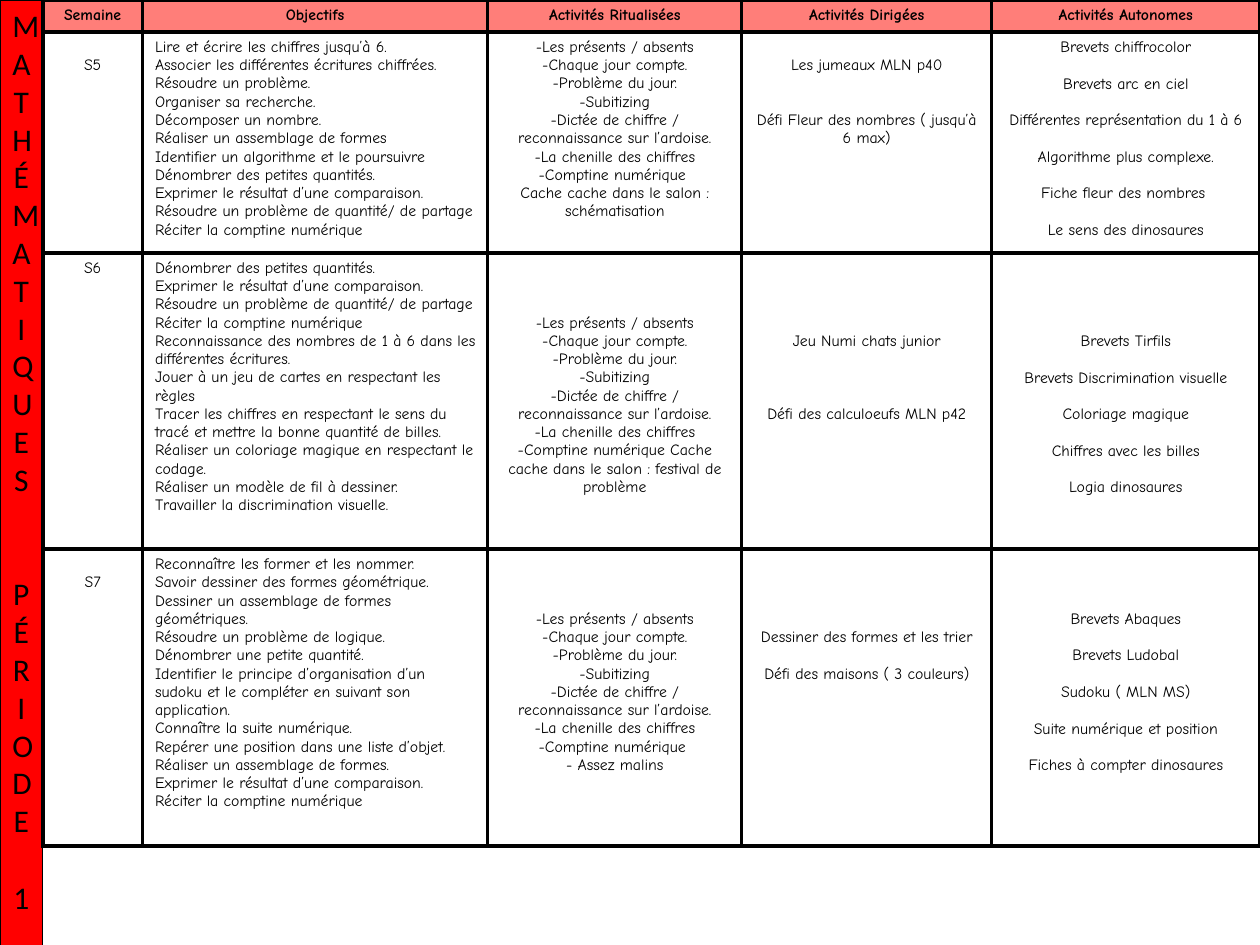
from lxml import etree
from pptx import Presentation
from pptx.dml.color import RGBColor
from pptx.enum.shapes import MSO_SHAPE
from pptx.enum.text import MSO_ANCHOR, PP_ALIGN
from pptx.util import Pt

RECT = MSO_SHAPE.RECTANGLE
TOP = MSO_ANCHOR.TOP
LEFT, MID = PP_ALIGN.LEFT, PP_ALIGN.CENTER
NS = "http://schemas.openxmlformats.org/drawingml/2006/main"
HUES = {"ink": "000000", "bar": "FF0000", "head": "FF7E79"}
INK = RGBColor.from_string(HUES["ink"])
INSET = 3.6

# Each "|" ends a line; an empty line becomes spacing before the next one
TITLE = "M|A|T|H|É|M|A|T|I|Q|U|E|S|||P|É|R|I|O|D|E||1"
HEADS = ["Semaine", "Objectifs", "Activités Ritualisées",
         "Activités Dirigées", "Activités Autonomes"]
DAILY = ("-Les présents / absents|-Chaque jour compte.|-Problème du jour.|"
         "-Subitizing|-Dictée de chiffre / reconnaissance sur l’ardoise.|"
         "-La chenille des chiffres|-Comptine numérique ")
WEEKS = [
    ["|S5",
     "Lire et écrire les chiffres jusqu’à 6.|"
     "Associer les différentes écritures chiffrées.|"
     "Résoudre un problème.|Organiser sa recherche.|"
     "Décomposer un nombre.|Réaliser un assemblage de formes|"
     "Identifier un algorithme et le poursuivre|"
     "Dénombrer des petites quantités.|"
     "Exprimer le résultat d’une comparaison.|"
     "Résoudre un problème de quantité/ de partage|"
     "Réciter la comptine numérique",
     DAILY + "|Cache cache dans le salon : schématisation",
     "|Les jumeaux MLN p40|||Défi Fleur des nombres ( jusqu’à 6 max)",
     "Brevets chiffrocolor||Brevets arc en ciel||"
     "Différentes représentation du 1 à 6||Algorithme plus complexe.||"
     "Fiche fleur des nombres ||Le sens des dinosaures"],
    ["S6",
     "Dénombrer des petites quantités.|"
     "Exprimer le résultat d’une comparaison.|"
     "Résoudre un problème de quantité/ de partage|"
     "Réciter la comptine numérique|"
     "Reconnaissance des nombres de 1 à 6 dans les différentes écritures.|"
     "Jouer à un jeu de cartes en respectant les règles|"
     "Tracer les chiffres en respectant le sens du tracé et mettre la bonne "
     "quantité de billes.|"
     "Réaliser un coloriage magique en respectant le codage.|"
     "Réaliser un modèle de fil à dessiner.|"
     "Travailler la discrimination visuelle.",
     "|||" + DAILY + "Cache cache dans le salon : festival de problème",
     "||||Jeu Numi chats junior||||Défi des calculoeufs MLN p42",
     "||||Brevets Tirfils||Brevets Discrimination visuelle||"
     "Coloriage magique||Chiffres avec les billes||Logia dinosaures"],
    ["|S7",
     "Reconnaître les former et les nommer.|"
     "Savoir dessiner des formes géométrique.|"
     "Dessiner un assemblage de formes géométriques.|"
     "Résoudre un problème de logique.|Dénombrer une petite quantité.|"
     "Identifier le principe d’organisation d’un sudoku et le compléter en "
     "suivant son application.|"
     "Connaître la suite numérique.|"
     "Repérer une position dans une liste d’objet.|"
     "Réaliser un assemblage de formes.|"
     "Exprimer le résultat d’une comparaison.|"
     "Réciter la comptine numérique",
     "|||" + DAILY + "|- Assez malins",
     "||||Dessiner des formes et les trier||Défi des maisons ( 3 couleurs)",
     "|||Brevets Abaques||Brevets Ludobal||Sudoku ( MLN MS)||"
     "Suite numérique et position||Fiches à compter dinosaures"],
]


def write(frame, text, pitch, align, look):
    """Fill a text frame, turning empty lines into spacing."""
    body = text.lstrip("|")
    frame.margin_top = Pt(INSET + (len(text) - len(body)) * pitch)
    gap, para = 0, None
    for line in body.split("|"):
        if not line:
            gap += 1
            continue
        para = frame.add_paragraph() if para else frame.paragraphs[0]
        para.alignment = align
        if gap:
            para.space_before = Pt(gap * pitch)
        gap = 0
        run = para.add_run()
        run.text = line
        for key, val in look.items():
            setattr(run.font, key, val)
        run.font.color.rgb = INK


def edge(cell):
    """Draw the four borders of a cell."""
    props = cell._tc.get_or_add_tcPr()
    for side in "LRTB":
        line = etree.SubElement(props, f"{{{NS}}}ln{side}", w=str(Pt(2.25)))
        fill = etree.SubElement(line, f"{{{NS}}}solidFill")
        etree.SubElement(fill, f"{{{NS}}}srgbClr", val=HUES["ink"])


deck = Presentation()
deck.slide_width, deck.slide_height = Pt(720), Pt(540)
slide = deck.slides.add_slide(deck.slide_layouts[6])

# Side bar with the upright title
bar = slide.shapes.add_shape(RECT, Pt(0), Pt(0), Pt(24.5), Pt(574.6))
bar.shadow.inherit = False
bar.fill.solid()
bar.fill.fore_color.rgb = RGBColor.from_string(HUES["bar"])
bar.line.color.rgb = INK
bar.line.width = Pt(0.75)
bar.text_frame.word_wrap = True
bar.text_frame.vertical_anchor = TOP
write(bar.text_frame, TITLE, 21.97, MID, {"name": "Calibri", "size": Pt(18)})

# Weekly plan
cols = [56.9, 197.3, 145.2, 142.7, 153.4]
rows = [18.25, 126.25, 169.25, 169.75]
grid = slide.shapes.add_table(len(rows), len(cols), Pt(24.5), Pt(0),
                              Pt(sum(cols)), Pt(sum(rows))).table
grid.first_row = grid.horz_banding = False
for col, wide in zip(grid.columns, cols):
    col.width = Pt(wide)
for row, high in zip(grid.rows, rows):
    row.height = Pt(high)

for r, texts in enumerate([HEADS] + WEEKS):
    look = {"name": "Comic Neue", "size": Pt(9), "bold": r == 0}
    for c, text in enumerate(texts):
        cell = grid.cell(r, c)
        edge(cell)
        if r == 0:
            cell.fill.solid()
            cell.fill.fore_color.rgb = RGBColor.from_string(HUES["head"])
        else:
            cell.fill.background()
        write(cell.text_frame, text, 10.45, LEFT if r and c == 1 else MID, look)
        cell.margin_top = Pt(INSET + 10.45 * (len(text) - len(text.lstrip("|"))))

deck.save("out.pptx")
